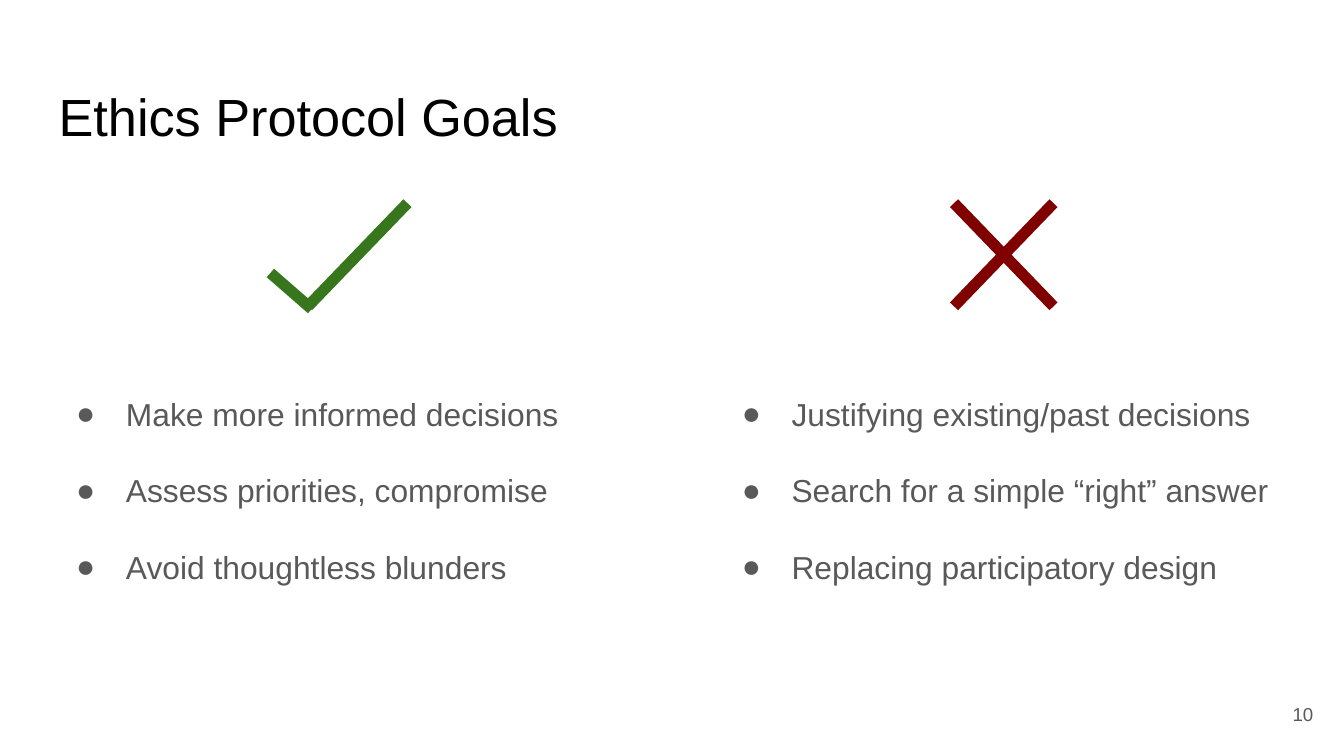
from pptx import Presentation
from pptx.dml.color import RGBColor
from pptx.enum.shapes import MSO_CONNECTOR
from pptx.enum.text import MSO_ANCHOR, MSO_AUTO_SIZE, PP_ALIGN
from pptx.oxml.ns import qn
from pptx.util import Cm, Pt
from lxml import etree

LINE = MSO_CONNECTOR.STRAIGHT
TOP, MIDDLE = MSO_ANCHOR.TOP, MSO_ANCHOR.MIDDLE
LEFT, RIGHT = PP_ALIGN.LEFT, PP_ALIGN.RIGHT

FONT = "Arial"
COLORS = {"title": "000000", "body": "595959", "yes": "38761D", "no": "800000"}

# Content
TITLE = "Ethics Protocol Goals"
PAGE = "10"
COLUMNS = [
    ["Make more informed decisions",
     "Assess priorities, compromise",
     "Avoid thoughtless blunders"],
    ["Justifying existing/past decisions",
     "Search for a simple “right” answer",
     "Replacing participatory design"],
]

# Geometry in cm
WIDTH, HEIGHT = 25.4, 14.29
MARGIN = 0.86
COLUMN_W = 11.1
COLUMN_TOP, COLUMN_H = 3.2, 9.5
MARK_TOP, MARK_BOTTOM = 3.84, 5.79
CHECK_X, CROSS_X, MARK_W = 5.82, 18.03, 1.88
STROKES = [  # color, x1, y1, x2, y2
    ("yes", 5.11, 5.16, 5.89, 5.84),
    ("yes", CHECK_X, MARK_BOTTOM, CHECK_X + MARK_W, MARK_TOP),
    ("no", CROSS_X, MARK_BOTTOM, CROSS_X + MARK_W, MARK_TOP),
    ("no", CROSS_X + MARK_W, MARK_BOTTOM, CROSS_X, MARK_TOP),
]


def rgb(name):
    return RGBColor.from_string(COLORS[name])


def set_frame(tf, anchor, top=0.25, bottom=0.25):
    tf.word_wrap = True
    tf.auto_size = MSO_AUTO_SIZE.NONE
    tf.vertical_anchor = anchor
    tf.margin_left = tf.margin_right = Cm(0.25)
    tf.margin_top, tf.margin_bottom = Cm(top), Cm(bottom)


def add_text(p, text, size, color, align=LEFT):
    p.alignment = align
    r = p.add_run()
    r.text = text
    r.font.name = FONT
    r.font.size = Pt(size)
    r.font.color.rgb = rgb(color)


def add_bullet(p):
    pPr = p._p.get_or_add_pPr()
    pPr.set("marL", str(Cm(1.27)))
    pPr.set("indent", str(Cm(-0.94)))
    etree.SubElement(pPr, qn("a:buFont"), typeface=FONT)
    etree.SubElement(pPr, qn("a:buChar"), char="●")


def add_column(s, left, items):
    box = s.shapes.add_textbox(Cm(left), Cm(COLUMN_TOP), Cm(COLUMN_W), Cm(COLUMN_H))
    tf = box.text_frame
    set_frame(tf, TOP, top=3.53)  # leaves room for the mark above the list
    for i, item in enumerate(items):
        p = tf.paragraphs[0] if i == 0 else tf.add_paragraph()
        p.line_spacing = Pt(41)
        add_text(p, item, 17, "body")
        add_bullet(p)


def add_stroke(s, color, *ends):
    c = s.shapes.add_connector(LINE, *(Cm(v) for v in ends))
    c.line.color.rgb = rgb(color)
    c.line.width = Pt(6)
    etree.SubElement(c._element.spPr, qn("a:effectLst"))


def main():
    prs = Presentation()
    prs.slide_width, prs.slide_height = Cm(WIDTH), Cm(HEIGHT)
    s = prs.slides.add_slide(prs.slide_layouts[5])

    # Title
    title = s.shapes.title
    title.left, title.top = Cm(MARGIN), Cm(1.24)
    title.width, title.height = Cm(WIDTH - 2 * MARGIN), Cm(1.6)
    set_frame(title.text_frame, TOP, top=0.35, bottom=0)
    add_text(title.text_frame.paragraphs[0], TITLE, 28, "title")

    # Goals on the left, non-goals on the right
    for left, items in zip((MARGIN, WIDTH - MARGIN - COLUMN_W), COLUMNS):
        add_column(s, left, items)

    # Check mark and cross
    for stroke in STROKES:
        add_stroke(s, *stroke)

    # Page number
    number = s.shapes.add_textbox(Cm(23.55), Cm(12.95), Cm(1.52), Cm(1.09))
    set_frame(number.text_frame, MIDDLE)
    add_text(number.text_frame.paragraphs[0], PAGE, 10, "body", RIGHT)

    prs.save("out.pptx")


if __name__ == "__main__":
    main()
